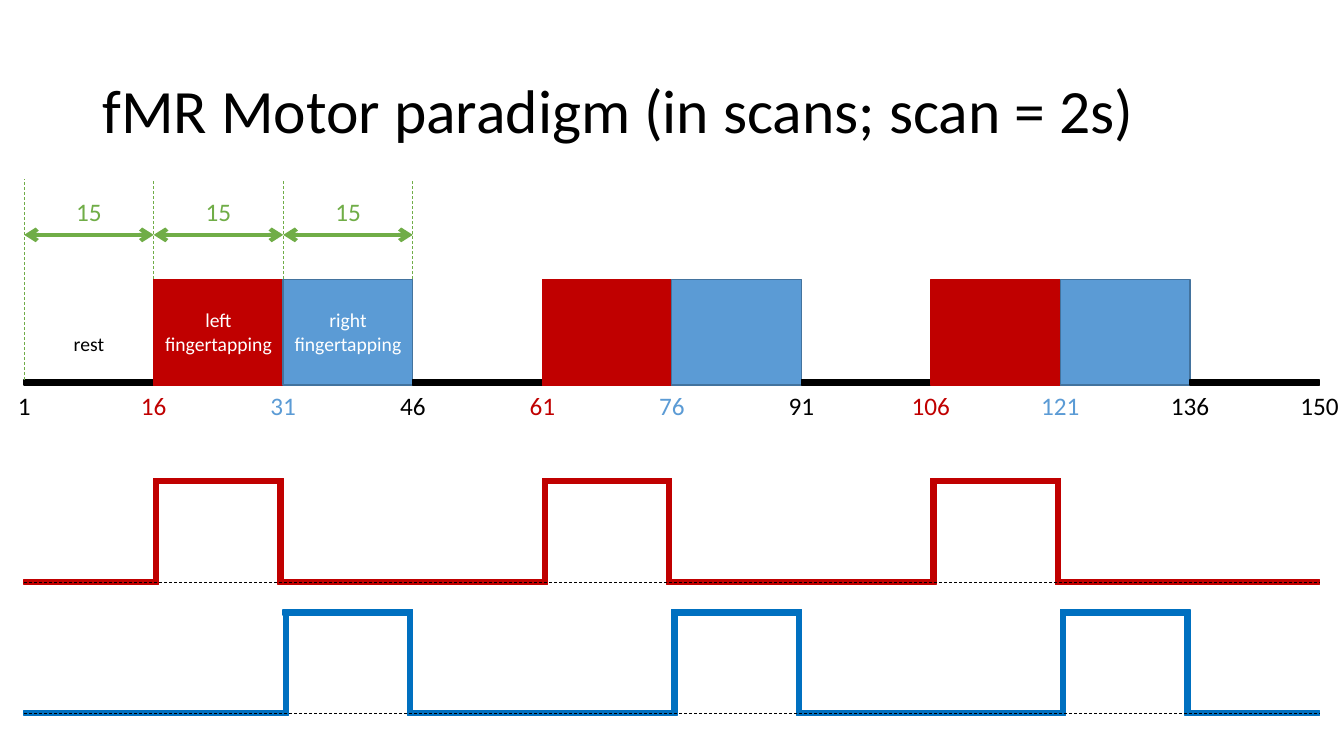
from lxml import etree
from pptx import Presentation
from pptx.dml.color import RGBColor
from pptx.enum import dml, shapes, text
from pptx.oxml import ns
from pptx.util import Pt

COLORS = {
    "black": "000000", "white": "FFFFFF", "red": "C00000", "sky": "5B9BD5",
    "sky edge": "43739E", "blue": "0070C0", "green": "70AD47",
}
LEFT, STEP = 17.28, 92.52       # start of scan 1, width of one 15-scan period
PERIODS = 10
BAR, BLOCK = 3.6, 75.6          # bar thickness, block height
BLOCK_TOP = 199.44
BLOCK_BOTTOM = BLOCK_TOP + BLOCK
GUIDE_TOP, ARROW_Y = 128.16, 167.76


def edge(period):
    return LEFT + STEP * period


class Painter:
    font = "Calibri"

    def __init__(self, page):
        self.page = page

    def color(self, name):
        return RGBColor.from_string(COLORS[name])

    def rect(self, left, top, width, height, fill, outline=None):
        box = self.page.shapes.add_shape(
            shapes.MSO_SHAPE.RECTANGLE, Pt(left), Pt(top), Pt(width), Pt(height))
        box.shadow.inherit = False
        box.fill.solid()
        box.fill.fore_color.rgb = self.color(fill)
        box.line.color.rgb = self.color(outline or fill)
        box.line.width = Pt(1)

    def line(self, x1, y1, x2, y2, color, weight=0.5, arrows=False):
        connector = self.page.shapes.add_connector(
            shapes.MSO_CONNECTOR.STRAIGHT, Pt(x1), Pt(y1), Pt(x2), Pt(y2))
        connector.line.color.rgb = self.color(color)
        connector.line.width = Pt(weight)
        properties = connector._element.spPr
        if arrows:
            outline = properties.find(ns.qn("a:ln"))
            for end in ("a:headEnd", "a:tailEnd"):
                etree.SubElement(outline, ns.qn(end), type="arrow")
        else:
            connector.line.dash_style = dml.MSO_LINE.DASH
        etree.SubElement(properties, ns.qn("a:effectLst"))

    def textbox(self, left, top, width, height, words, size, color):
        box = self.page.shapes.add_textbox(Pt(left), Pt(top), Pt(width), Pt(height))
        frame = box.text_frame
        frame.text = words
        for para in frame.paragraphs:
            para.font.name = self.font
            para.font.size = Pt(size)
            para.font.color.rgb = self.color(color)
        return frame

    def title(self, left, top, width, height, words):
        frame = self.textbox(left, top, width, height, words, 44, "black")
        frame.word_wrap = True
        frame.vertical_anchor = text.MSO_ANCHOR.MIDDLE
        frame.paragraphs[0].line_spacing = 0.9

    def label(self, center, top, width, height, words, size, color):
        frame = self.textbox(center - width / 2, top, width, height, words, size, color)
        frame.word_wrap = False
        frame.auto_size = text.MSO_AUTO_SIZE.SHAPE_TO_FIT_TEXT
        for para in frame.paragraphs:
            para.alignment = text.PP_ALIGN.CENTER

    def number(self, center, top, value, color):
        words = str(value)
        self.label(center, top, 14.4 + 9.12 * len(words), 28.8, words, 18, color)

    def wave(self, base, phase, color):
        """Square wave that is high in every third period."""
        top = base + BAR - BLOCK
        for period in range(PERIODS):
            left = edge(period)
            if period % 3 == phase:
                self.rect(left, top, BAR, BLOCK, color)
                self.rect(left + STEP - BAR, top, BAR, BLOCK, color)
                self.rect(left, top, STEP, BAR, color)
            else:
                self.rect(left, base, STEP, BAR, color)
        middle = base + BAR / 2
        self.line(LEFT, middle, edge(PERIODS), middle, "black")


def main():
    deck = Presentation()
    deck.slide_width, deck.slide_height = Pt(960), Pt(540)
    painter = Painter(deck.slides.add_slide(deck.slide_layouts[6]))

    # Paradigm: rest, left and right in turn
    for period in range(PERIODS):
        left = edge(period)
        if period % 3 == 0:
            painter.rect(left, BLOCK_BOTTOM - BAR, STEP, BAR, "black")
        elif period % 3 == 1:
            painter.rect(left, BLOCK_TOP, STEP, BLOCK, "red")
        else:
            painter.rect(left, BLOCK_TOP, STEP, BLOCK, "sky", "sky edge")

    # Scan numbers
    for period in range(PERIODS):
        color = ("black", "red", "sky")[period % 3]
        painter.number(edge(period), BLOCK_BOTTOM, 1 + 15 * period, color)
    painter.number(edge(PERIODS), BLOCK_BOTTOM, 150, "black")

    # Period lengths
    for period in range(3):
        painter.line(edge(period), ARROW_Y, edge(period + 1), ARROW_Y, "green", 3, arrows=True)
        painter.number(edge(period + 0.5), 136.8, 15, "green")
    for period in range(4):
        bottom = BLOCK_TOP if period else BLOCK_BOTTOM - BAR
        painter.line(edge(period), bottom, edge(period), GUIDE_TOP, "green")

    # Title and task names
    painter.title(66, 28.8, 828, 104.4, "fMR Motor paradigm (in scans; scan = 2s)")
    painter.label(edge(0.5), 233.28, 36.72, 24.48, "rest", 14, "black")
    for period, side in enumerate(("left", "right"), start=1):
        painter.label(edge(period + 0.5), 216.72, 92.16, 41.04,
                      f"{side}\nfingertapping", 14, "white")

    # Regressors
    painter.wave(414, 1, "red")
    painter.wave(507.6, 2, "blue")

    deck.save("out.pptx")


if __name__ == "__main__":
    main()
